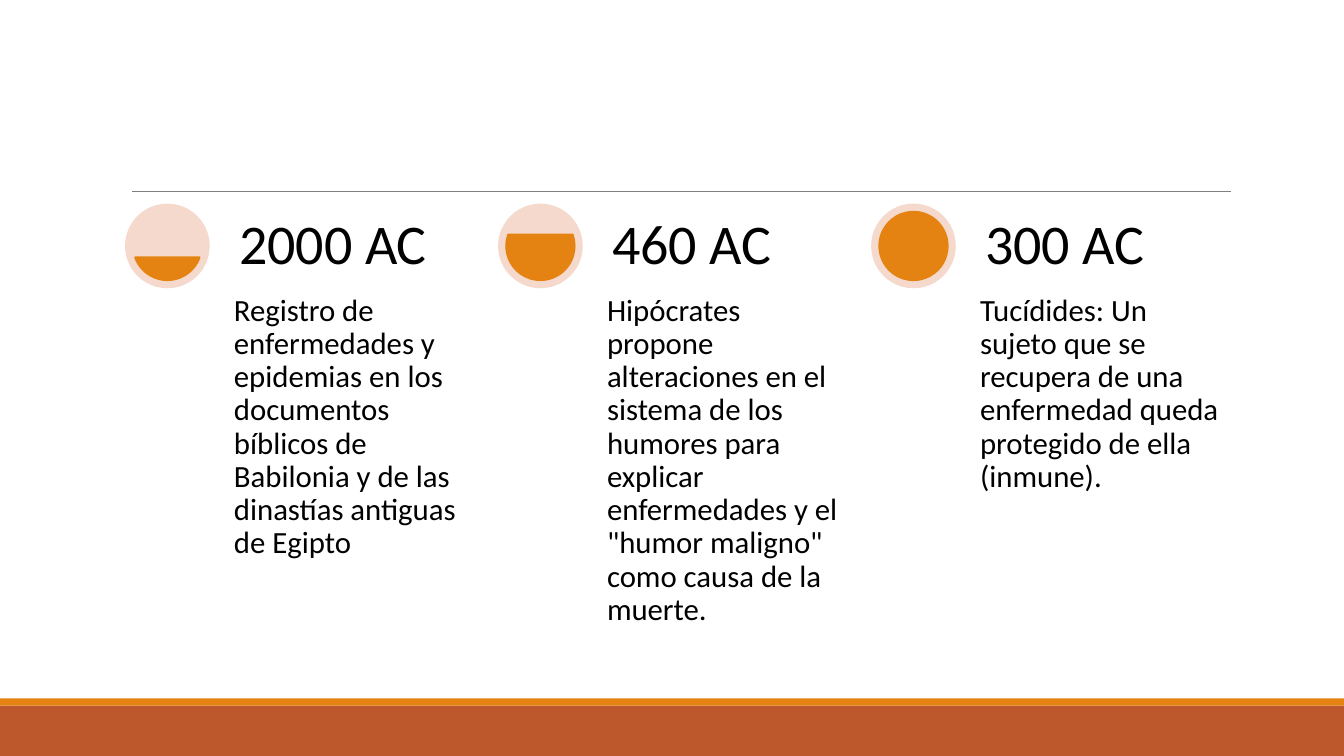
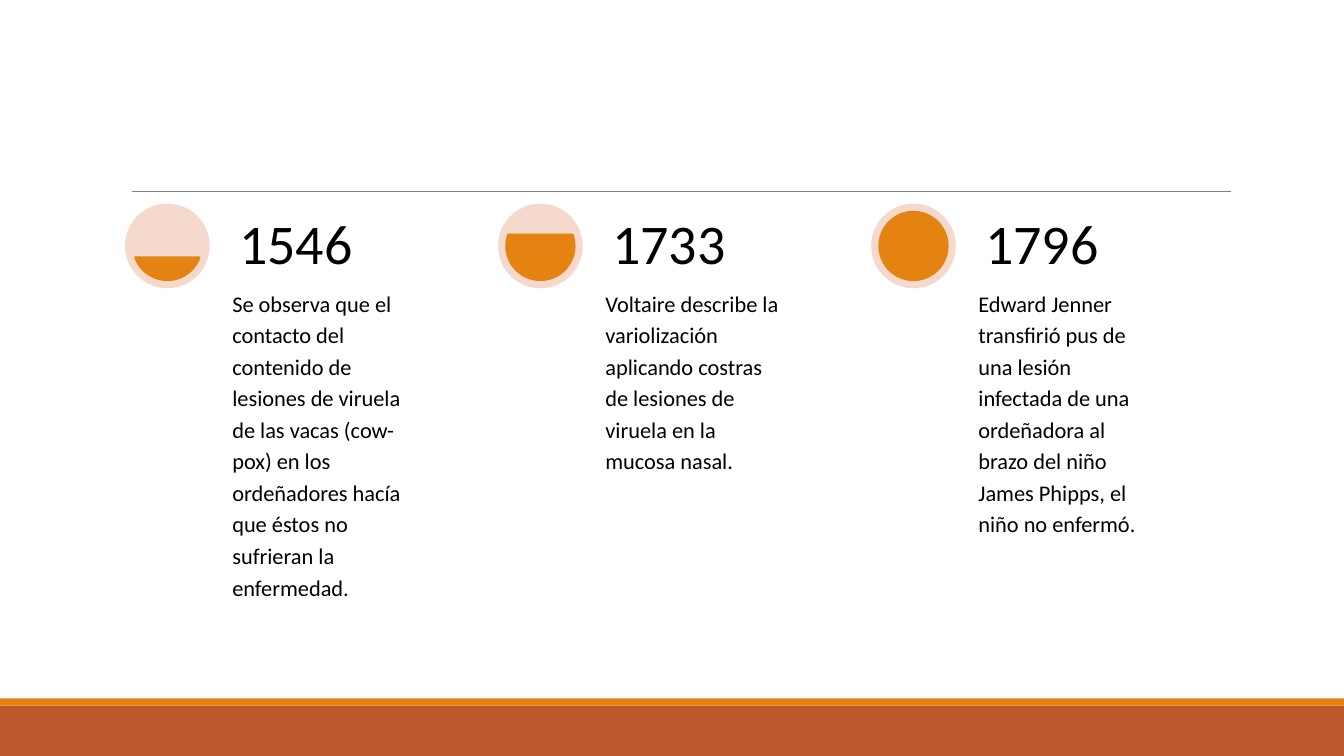
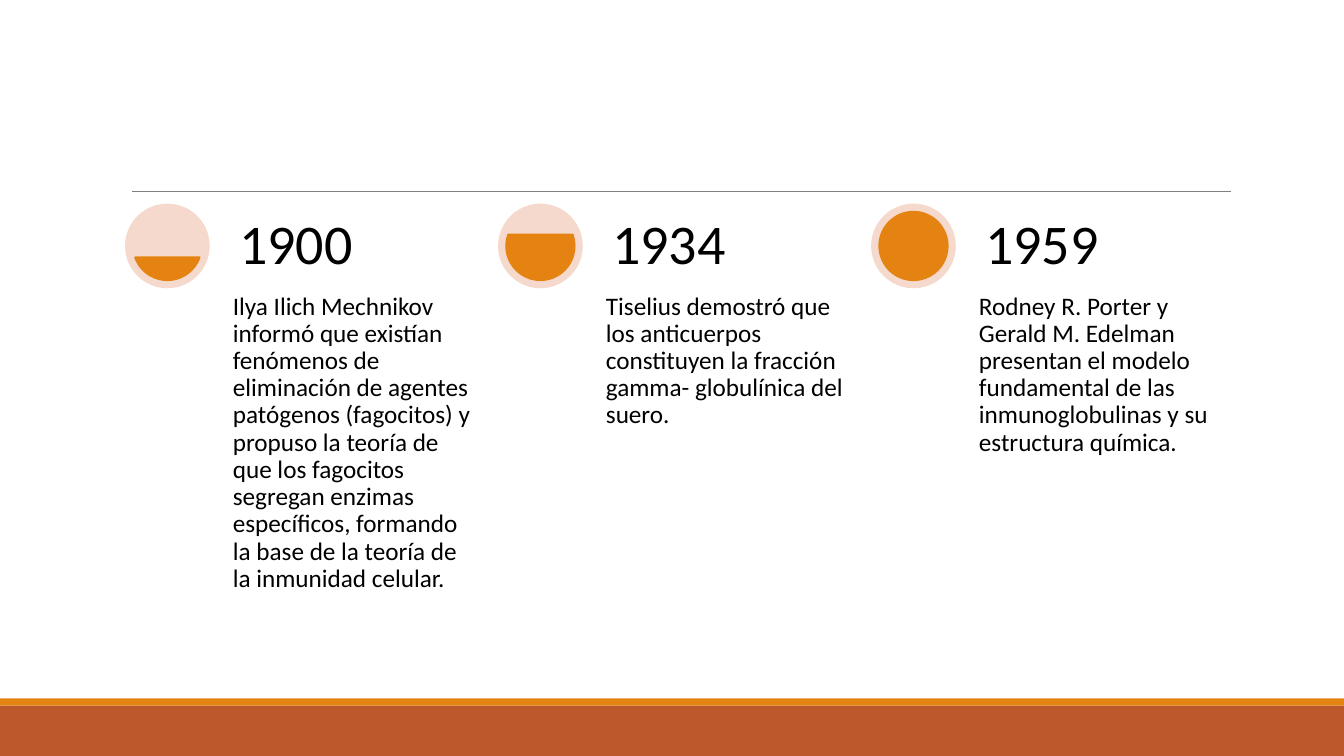
from math import asin, degrees

from lxml.etree import SubElement
from pptx import Presentation
from pptx.dml.color import RGBColor as RGB
from pptx.enum.shapes import MSO_CONNECTOR as LINE, MSO_SHAPE as SHAPE
from pptx.enum.text import MSO_ANCHOR as ANCHOR
from pptx.oxml.ns import qn
from pptx.util import Inches, Pt

# Shared look
WIDTH, HEIGHT = 13.33, 7.5
FONT = "Calibri"
COLORS = {"rust": "BD582C", "amber": "E48312", "blush": "F5D9CC",
          "rule": "808080", "text": "000000"}

# Grid: three columns, each a dial beside a date with a text below
LEFT, PITCH = 1.24, 3.7
TOP, DIAL = 2.02, 0.84
RIM = 0.08
INDENT, TEXT_W, TEXT_H = 1.02, 2.5, 3.55
DATE_SIZE = 40

# Text size and (date, text) events of each slide; a new line is a paragraph
SLIDES = [
    (22, [
        ("2000 AC", "Registro de enfermedades y epidemias en los documentos "
         "bíblicos de Babilonia y de las dinastías antiguas de Egipto"),
        ("460 AC", "Hipócrates propone alteraciones en el sistema de los "
         "humores para explicar enfermedades y el \"humor maligno\" como "
         "causa de la muerte."),
        ("300 AC", "Tucídides: Un sujeto que se recupera de una enfermedad "
         "queda protegido de ella (inmune)."),
    ]),
    (16, [
        ("1546", """Se observa que el
contacto del
contenido de
lesiones de viruela
de las vacas (cow-
pox) en los
ordeñadores hacía
que éstos no
sufrieran la
enfermedad."""),
        ("1733", """Voltaire describe la
variolización
aplicando costras
de lesiones de
viruela en la
mucosa nasal."""),
        ("1796", """Edward Jenner
transfirió pus de
una lesión
infectada de una
ordeñadora al
brazo del niño
James Phipps, el
niño no enfermó."""),
    ]),
    (18, [
        ("1900", "Ilya Ilich Mechnikov informó que existían fenómenos de "
         "eliminación de agentes patógenos (fagocitos) y propuso la teoría "
         "de que los fagocitos segregan enzimas específicos, formando la "
         "base de la teoría de la inmunidad celular."),
        ("1934", "Tiselius demostró que los anticuerpos constituyen la "
         "fracción gamma- globulínica del suero."),
        ("1959", "Rodney R. Porter y Gerald M. Edelman presentan el modelo "
         "fundamental de las inmunoglobulinas y su estructura química."),
    ]),
]


def color(name):
    return RGB.from_string(COLORS[name])


def add_form(slide, kind, box, fill, edge=None):
    form = slide.shapes.add_shape(kind, *map(Inches, box))
    form.shadow.inherit = False
    form.fill.solid()
    form.fill.fore_color.rgb = color(fill)
    if edge:
        form.line.color.rgb = color(fill)
        form.line.width = Pt(edge)
    else:
        form.line.fill.background()
    return form


def add_rule(slide, x1, x2, y):
    rule = slide.shapes.add_connector(
        LINE.STRAIGHT, Inches(x1), Inches(y), Inches(x2), Inches(y))
    rule.line.color.rgb = color("rule")
    rule.line.width = Pt(0.5)
    SubElement(rule.element.spPr, qn("a:effectLst"))
    return rule


def add_text(slide, box, text, size, anchor=ANCHOR.TOP):
    frame = slide.shapes.add_textbox(*map(Inches, box)).text_frame
    frame.word_wrap = True
    frame.vertical_anchor = anchor
    # Margins grow with the text size
    pad = Pt(0.2 * size)
    frame.margin_left = frame.margin_right = pad
    frame.margin_top = frame.margin_bottom = pad
    for i, words in enumerate(text.split("\n")):
        para = frame.add_paragraph() if i else frame.paragraphs[0]
        para.line_spacing = 0.9
        para.space_after = Pt(0.33 * size)
        run = para.add_run()
        run.text = words
        run.font.name = FONT
        run.font.size = Pt(size)
        run.font.color.rgb = color("text")


def add_dial(slide, x, level):
    """Draw a disc filled from below up to a share of its height."""
    add_form(slide, SHAPE.OVAL, (x, TOP, DIAL, DIAL), "blush")
    side = DIAL - 2 * RIM
    chord = add_form(slide, SHAPE.CHORD, (x + RIM, TOP + RIM, side, side),
                     "amber", 1.25)
    angle = degrees(asin(1 - 2 * level))
    for i, turn in enumerate((angle, 180 - angle)):
        # Angles count in 60000ths of a degree, adjustments in 100000ths
        chord.adjustments[i] = round(turn % 360 * 0.6, 2)


def add_event(slide, col, level, date, text, size):
    x = LEFT + col * PITCH
    add_dial(slide, x, level)
    add_text(slide, (x + INDENT, TOP + DIAL, TEXT_W, TEXT_H), text, size)
    add_text(slide, (x + INDENT, TOP, TEXT_W, DIAL), date, DATE_SIZE,
             ANCHOR.BOTTOM)


def set_frame(slide, layout):
    """Draw the bands and the rule, and hand them to the shared layout."""
    for holder in list(layout.placeholders):
        layout.shapes.element.remove(holder.element)
    parts = [
        add_form(slide, SHAPE.RECTANGLE, (0, 7, WIDTH, 0.5), "rust"),
        add_form(slide, SHAPE.RECTANGLE, (0, 6.93, WIDTH, 0.07), "amber"),
        add_rule(slide, 1.31, 12.21, 1.9),
    ]
    for part in parts:
        layout.shapes.element.append(part.element)


def main():
    deck = Presentation()
    deck.slide_width, deck.slide_height = Inches(WIDTH), Inches(HEIGHT)
    blank = deck.slide_layouts[6]
    for page, (size, events) in enumerate(SLIDES):
        slide = deck.slides.add_slide(blank)
        if page == 0:
            set_frame(slide, blank)
        for col, (date, text) in enumerate(events):
            level = (col + 1) / len(events)
            add_event(slide, col, level, date, text, size)
    deck.save("out.pptx")


if __name__ == "__main__":
    main()
